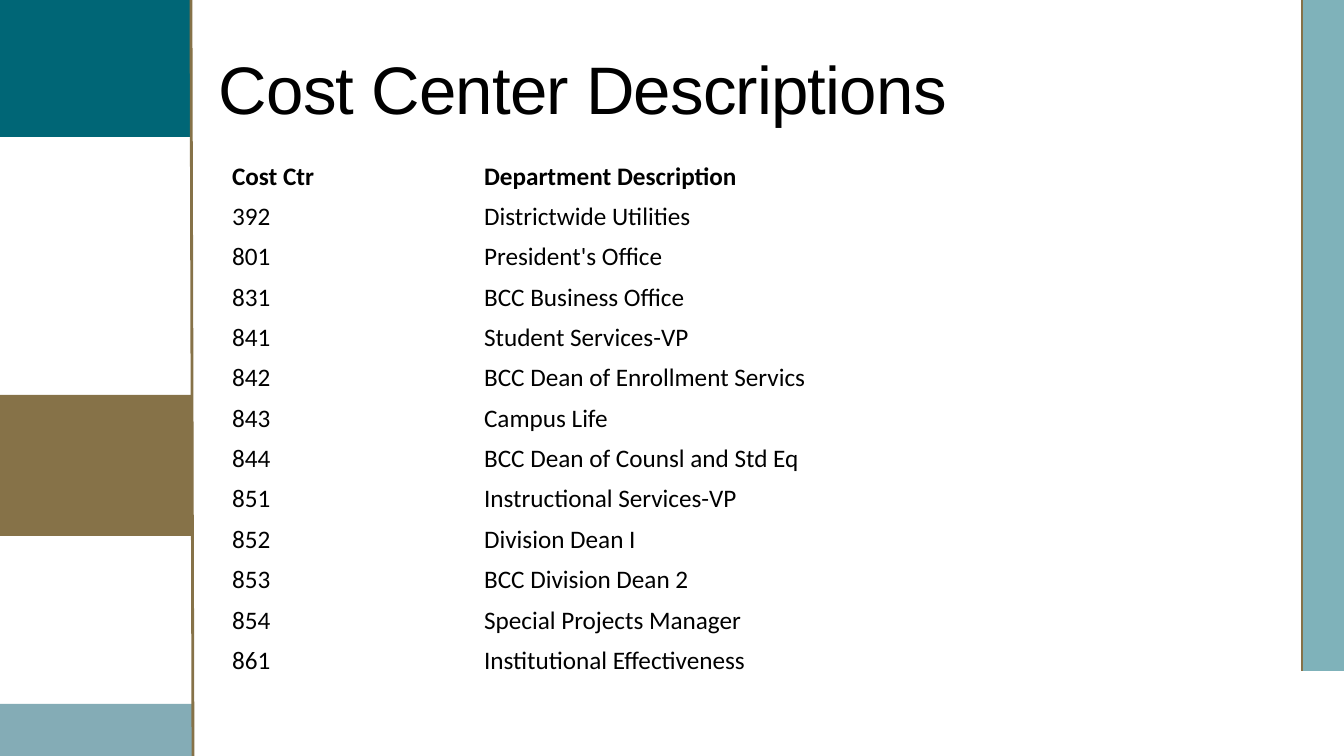
from dataclasses import dataclass

from lxml import etree
from pptx import Presentation
from pptx.dml.color import RGBColor
from pptx.enum.shapes import MSO_CONNECTOR, MSO_SHAPE
from pptx.enum.text import MSO_ANCHOR
from pptx.oxml.ns import qn
from pptx.util import Emu, Pt

RECTANGLE = MSO_SHAPE.RECTANGLE
STRAIGHT = MSO_CONNECTOR.STRAIGHT
MIDDLE = MSO_ANCHOR.MIDDLE
PX_PER_INCH = 100.8
BLANK_LAYOUT = 6


@dataclass(frozen=True)
class Theme:
    teal: str = "006676"
    side_teal: str = "006677"
    brown: str = "867248"
    pale_blue: str = "84ACB6"
    black: str = "000000"
    title_font: str = "Arial"
    table_font: str = "Calibri"
    title_size: int = 48
    table_size: int = 18
    rule_width: int = 2


COST_CENTERS = [
    ("Cost Ctr", "Department Description"),
    ("392", "Districtwide Utilities"),
    ("801", "President's Office"),
    ("831", "BCC Business Office"),
    ("841", "Student Services-VP"),
    ("842", "BCC Dean of Enrollment Servics"),
    ("843", "Campus Life"),
    ("844", "BCC Dean of Counsl and Std Eq"),
    ("851", "Instructional Services-VP"),
    ("852", "Division Dean I"),
    ("853", "BCC Division Dean 2"),
    ("854", "Special Projects Manager"),
    ("861", "Institutional Effectiveness"),
]


def px(length):
    return Emu(round(length * 914400 / PX_PER_INCH))


def write_text(frame, text, *, font, size, color, bold=False, line_spacing=None, tracking=None):
    paragraph = frame.paragraphs[0]
    paragraph.line_spacing = line_spacing
    run = paragraph.add_run()
    run.text = text
    run.font.name = font
    run.font.size = Pt(size)
    run.font.bold = bold
    run.font.color.rgb = RGBColor.from_string(color)
    if tracking is not None:
        run.font._element.set("spc", str(round(tracking * 100)))


class SlideBuilder:
    def __init__(self, slide, theme):
        self.slide = slide
        self.theme = theme

    def block(self, left, top, width, height, color, opacity=100):
        shape = self.slide.shapes.add_shape(RECTANGLE, px(left), px(top), px(width), px(height))
        shape.shadow.inherit = False
        shape.fill.solid()
        shape.fill.fore_color.rgb = RGBColor.from_string(color)
        shape.line.fill.background()
        if opacity < 100:
            color_element = shape._element.spPr.find(qn("a:solidFill"))[0]
            etree.SubElement(color_element, qn("a:alpha")).set("val", str(opacity * 1000))

    def rule(self, start_x, start_y, end_x, end_y):
        connector = self.slide.shapes.add_connector(
            STRAIGHT, px(start_x), px(start_y), px(end_x), px(end_y))
        connector.line.color.rgb = RGBColor.from_string(self.theme.brown)
        connector.line.width = Pt(self.theme.rule_width)
        etree.SubElement(connector._element.spPr, qn("a:effectLst"))

    def title(self, left, top, width, height, text):
        frame = self.slide.shapes.add_textbox(px(left), px(top), px(width), px(height)).text_frame
        frame.word_wrap = True
        frame.vertical_anchor = MIDDLE
        write_text(frame, text, font=self.theme.title_font, size=self.theme.title_size,
                   color=self.theme.black, line_spacing=0.9, tracking=-0.6)

    def table(self, left, top, column_widths, row_height, rows):
        table = self.slide.shapes.add_table(
            len(rows), len(column_widths), px(left), px(top),
            px(sum(column_widths)), px(row_height * len(rows))).table
        table.first_row = False
        table.horz_banding = False
        for column, width in zip(table.columns, column_widths):
            column.width = px(width)
        for row_index, values in enumerate(rows):
            table.rows[row_index].height = px(row_height)
            for column_index, value in enumerate(values):
                cell = table.cell(row_index, column_index)
                cell.fill.background()
                cell.vertical_anchor = MIDDLE
                write_text(cell.text_frame, value, font=self.theme.table_font,
                           size=self.theme.table_size, color=self.theme.black,
                           bold=row_index == 0)


def main():
    presentation = Presentation()
    presentation.slide_width = px(1344)
    presentation.slide_height = px(756)
    theme = Theme()
    slide = presentation.slides.add_slide(presentation.slide_layouts[BLANK_LAYOUT])
    builder = SlideBuilder(slide, theme)

    builder.block(-2, -1, 193, 138, theme.teal)
    builder.block(1302, 0, 42, 671, theme.side_teal, opacity=50)
    builder.rule(1302, 0, 1302, 671)
    builder.block(-1, 395, 193, 141, theme.brown)
    builder.block(0, 704, 193, 52, theme.pale_blue)
    builder.rule(191, 0, 193, 756)

    builder.title(209, 5, 1058, 176, "Cost Center Descriptions")
    builder.table(222, 156, (252, 807), 40, COST_CENTERS)
    presentation.save("out.pptx")


if __name__ == "__main__":
    main()
